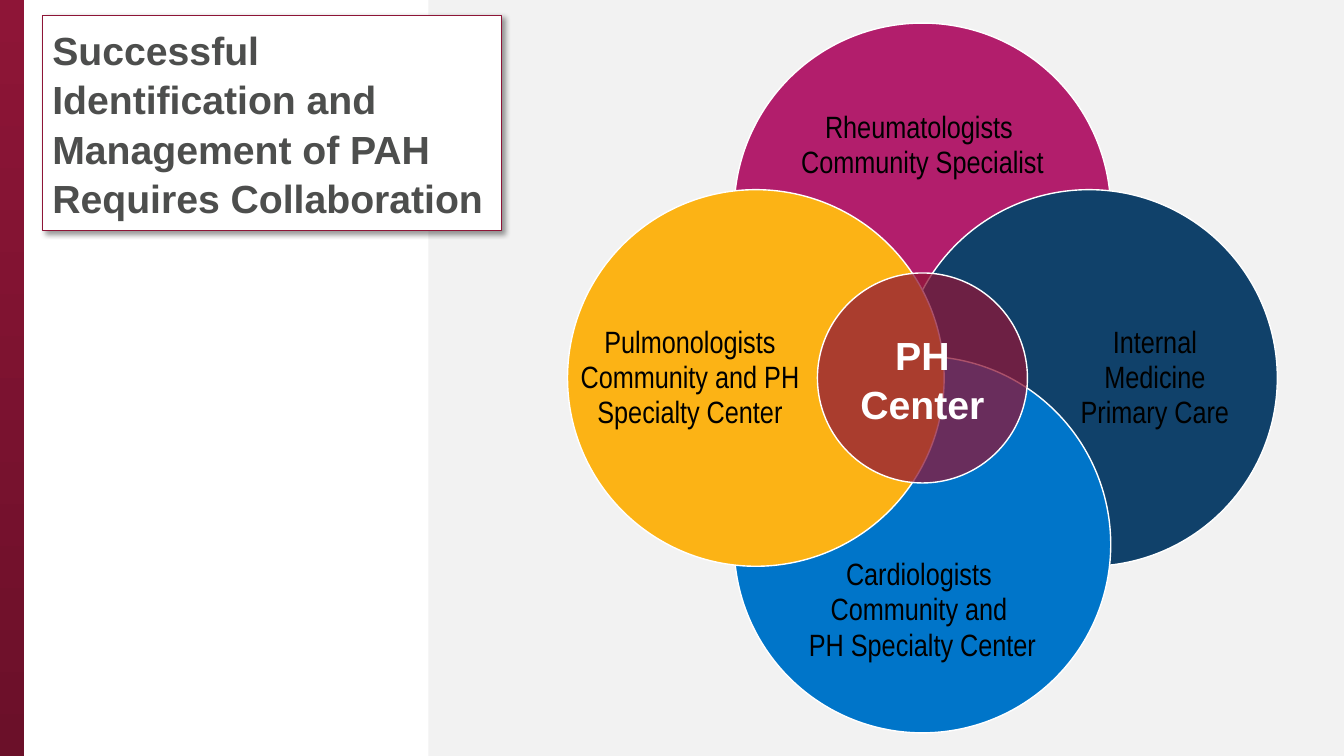
import dataclasses

import lxml.etree
import pptx
import pptx.dml.color
import pptx.enum.shapes
import pptx.enum.text
import pptx.oxml
import pptx.oxml.ns
import pptx.util

Pt = pptx.util.Pt
RGB = pptx.dml.color.RGBColor.from_string
SHAPE = pptx.enum.shapes.MSO_SHAPE
ALIGN = pptx.enum.text.PP_ALIGN
qn = pptx.oxml.ns.qn


@dataclasses.dataclass(frozen=True)
class Theme:
    """Colours, fonts and type sizes of the slide."""
    white: str = "FFFFFF"
    panel: str = "F2F2F2"
    crimson: str = "8E1537"
    crimson_dark: str = "6B1029"
    title: str = "4D4E4D"
    label: str = "000000"
    magenta: str = "B21E6C"
    navy: str = "10416A"
    blue: str = "0075C9"
    amber: str = "FCB315"
    heading_font: str = "Arial"
    label_font: str = "Arial Narrow"
    heading_size: float = 28
    label_size: float = 22
    heading_spacing: float = 1.05
    label_spacing: float = 0.95


THEME = Theme()
PETALS = [
    (0, -1, THEME.magenta, ["Rheumatologists ", "Community Specialist"]),
    (1, 0, THEME.navy, ["Internal", "Medicine", "Primary Care"]),
    (0, 1, THEME.blue, ["Cardiologists ", "Community and ", "PH Specialty Center"]),
    (-1, 0, THEME.amber, ["Pulmonologists", "Community and PH", "Specialty Center"]),
]


def place(shape, left, top, width, height):
    """Set the position and size of a shape in points."""
    shape.left, shape.top, shape.width, shape.height = map(Pt, (left, top, width, height))


def add_block(page, kind, box, color, line=None):
    """Add a flat preset shape with an optional outline."""
    shape = page.shapes.add_shape(kind, *map(Pt, box))
    shape.shadow.inherit = False
    shape.fill.solid()
    shape.fill.fore_color.rgb = RGB(color)
    if line:
        shape.line.color.rgb = RGB(line)
        shape.line.width = Pt(1)
    else:
        shape.line.fill.background()
    return shape


def add_span(para, text, font, size, color, bold=False):
    """Add one formatted run to a paragraph."""
    span = para.add_run()
    span.text = text
    span.font.name = font
    span.font.size = Pt(size)
    span.font.bold = bold
    span.font.color.rgb = RGB(color)


def add_heading(para, text, color, alignment):
    """Fill a paragraph with bold heading text."""
    para.alignment = alignment
    para.line_spacing = THEME.heading_spacing
    add_span(para, text, THEME.heading_font, THEME.heading_size, color, bold=True)


def add_background(page, left, top, width, height):
    """Draw the crimson side bar and the grey panel."""
    bar = add_block(page, SHAPE.RECTANGLE, (left, top, 17.14, height), THEME.crimson)
    bar.fill.gradient()
    bar.fill.gradient_angle = 270
    for stop, color in zip(bar.fill.gradient_stops, (THEME.crimson, THEME.crimson_dark)):
        stop.color.rgb = RGB(color)
    add_block(page, SHAPE.RECTANGLE, (left + 306, top, width - 306, height), THEME.panel)


def add_shadow(shape):
    """Give a shape a soft shadow to the lower right."""
    properties = shape.element.spPr
    effects = lxml.etree.SubElement(properties, qn("a:effectLst"))
    shadow = lxml.etree.SubElement(effects, qn("a:outerShdw"), blurRad=str(Pt(4)),
                                   dist=str(Pt(3)), dir="2700000", algn="tl", rotWithShape="0")
    color = lxml.etree.SubElement(shadow, qn("a:srgbClr"), val=THEME.label)
    lxml.etree.SubElement(color, qn("a:alpha"), val="40000")


def add_title(page, left, top, width, height):
    """Format the title placeholder and bring it in front of the panel."""
    title = page.shapes.title
    place(title, left, top, width, height)
    title.fill.solid()
    title.fill.fore_color.rgb = RGB(THEME.white)
    title.line.color.rgb = RGB(THEME.crimson)
    title.line.width = Pt(0.75)
    add_shadow(title)
    frame = title.text_frame
    frame.word_wrap = True
    frame.auto_size = pptx.enum.text.MSO_AUTO_SIZE.NONE
    frame.vertical_anchor = pptx.enum.text.MSO_ANCHOR.MIDDLE
    add_heading(frame.paragraphs[0],
                "Successful Identification and Management of PAH Requires Collaboration",
                THEME.title, ALIGN.LEFT)
    title.element.getparent().append(title.element)


def add_circle(page, center_x, center_y, diameter, color):
    """Add a white-outlined circle around a centre and return it."""
    box = (center_x - diameter / 2, center_y - diameter / 2, diameter, diameter)
    circle = add_block(page, SHAPE.OVAL, box, color, THEME.white)
    frame = circle.text_frame
    frame.word_wrap = False
    frame.vertical_anchor = pptx.enum.text.MSO_ANCHOR.MIDDLE
    frame.margin_left = frame.margin_right = frame.margin_top = frame.margin_bottom = 0
    return circle


def add_petal(page, center_x, center_y, diameter, across, down, color, lines):
    """Add an outer circle whose label is pushed away from the middle."""
    frame = add_circle(page, center_x, center_y, diameter, color).text_frame
    push = Pt(diameter * 0.35)
    frame.margin_left, frame.margin_right = push * max(across, 0), push * max(-across, 0)
    frame.margin_top, frame.margin_bottom = push * max(down, 0), push * max(-down, 0)
    para = frame.paragraphs[0]
    para.alignment = ALIGN.CENTER
    para.line_spacing = THEME.label_spacing
    for index, line in enumerate(lines):
        if index:
            para.add_line_break()
        add_span(para, line, THEME.label_font, THEME.label_size, THEME.label)


def add_center(page, center_x, center_y, diameter):
    """Add the translucent middle circle."""
    circle = add_circle(page, center_x, center_y, diameter, THEME.crimson)
    color = circle.element.spPr.find(qn("a:solidFill"))[0]
    lxml.etree.SubElement(color, qn("a:alpha"), val="74000")
    frame = circle.text_frame
    add_heading(frame.paragraphs[0], "PH", THEME.white, ALIGN.CENTER)
    add_heading(frame.add_paragraph(), "Center", THEME.white, ALIGN.CENTER)


def add_collaboration(page, left, top, size):
    """Draw four overlapping circles around the centre in a square box."""
    center_x, center_y = left + size / 2, top + size / 2
    diameter = 269
    reach = (size - diameter) / 2
    for across, down, color, lines in PETALS:
        add_petal(page, center_x + across * reach, center_y + down * reach,
                  diameter, across, down, color, lines)
    add_center(page, center_x, center_y, 150)


def main():
    """Build and save the slide."""
    deck = pptx.Presentation()
    deck.slide_width, deck.slide_height = Pt(960), Pt(540)
    page = deck.slides.add_slide(deck.slide_layouts[5])
    add_background(page, 0, 0, 960, 540)
    add_title(page, 30.2, 10.8, 327.8, 153.6)
    add_collaboration(page, 405.4, 16.5, 507)
    deck.save("out.pptx")


if __name__ == "__main__":
    main()
